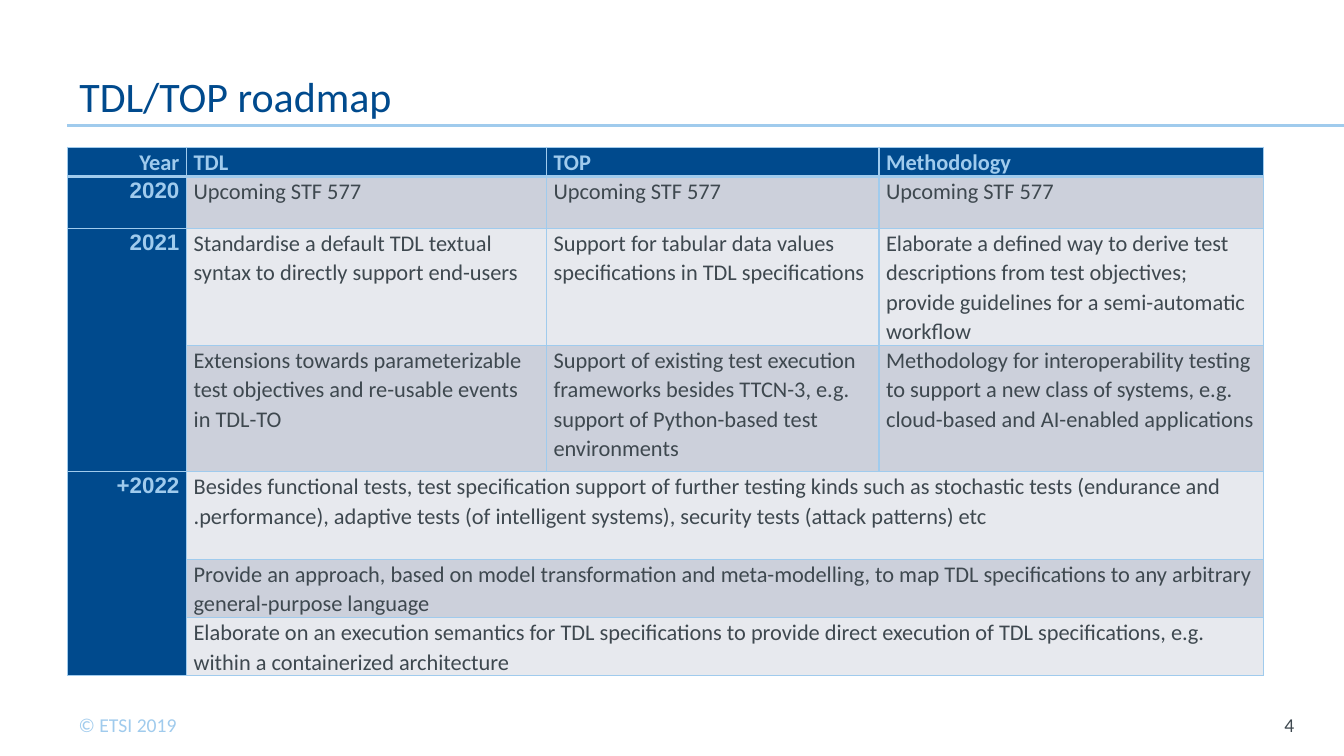
from dataclasses import dataclass

from lxml.etree import SubElement
from pptx import Presentation
from pptx.dml.color import RGBColor
from pptx.enum.shapes import MSO_CONNECTOR
from pptx.enum.text import MSO_ANCHOR, PP_ALIGN
from pptx.oxml.ns import qn
from pptx.util import Cm, Pt

COLORS = {
    "navy": "004A8D",
    "sky": "A0CBED",
    "ink": "3E484F",
    "dark band": "CCD0DB",
    "light band": "E7E9EE",
}
FONT = "Calibri"
COLUMN_WIDTHS = [3.0, 9.07, 8.38, 9.7]
ROW_HEIGHTS = [0.74, 1.3, 2.95, 3.18, 2.21, 1.47, 1.47]


@dataclass
class Entry:
    row: int
    column: int
    text: str
    row_span: int = 1
    column_span: int = 1
    right_to_left: bool = False


ENTRIES = [
    Entry(0, 0, "Year", right_to_left=True),
    Entry(0, 1, "TDL"),
    Entry(0, 2, "TOP"),
    Entry(0, 3, "Methodology"),
    Entry(1, 0, "2020", right_to_left=True),
    *(Entry(1, column, "Upcoming STF 577") for column in (1, 2, 3)),
    Entry(2, 0, "2021", row_span=2, right_to_left=True),
    Entry(2, 1, "Standardise a default TDL textual syntax to directly support end-users"),
    Entry(2, 2, "Support for tabular data values specifications in TDL specifications"),
    Entry(2, 3, "Elaborate a defined way to derive test descriptions from test objectives; "
                "provide guidelines for a semi-automatic workflow"),
    Entry(3, 1, "Extensions towards parameterizable test objectives and re-usable events "
                "in TDL-TO"),
    Entry(3, 2, "Support of existing test execution frameworks besides TTCN-3, e.g. "
                "support of Python-based test environments"),
    Entry(3, 3, "Methodology for interoperability testing to support a new class of "
                "systems, e.g. cloud-based and AI-enabled applications"),
    Entry(4, 0, "2022+", row_span=3, right_to_left=True),
    Entry(4, 1, "Besides functional tests, test specification support of further testing "
                "kinds such as stochastic tests (endurance and performance), adaptive tests "
                "(of intelligent systems), security tests (attack patterns) etc.",
          column_span=3, right_to_left=True),
    Entry(5, 1, "Provide an approach, based on model transformation and meta-modelling, to "
                "map TDL specifications to any arbitrary general-purpose language",
          column_span=3),
    Entry(6, 1, "Elaborate on an execution semantics for TDL specifications to provide "
                "direct execution of TDL specifications, e.g. within a containerized "
                "architecture", column_span=3),
]


def write(frame, text: str, *, size: float, color: str, bold: bool = False,
          align=PP_ALIGN.LEFT, line_spacing=None, right_to_left: bool = False,
          digit_font: str = FONT) -> None:
    paragraph = frame.paragraphs[0]
    paragraph.alignment = align
    paragraph.line_spacing = line_spacing
    if right_to_left:
        paragraph._p.get_or_add_pPr().set("rtl", "1")
    run = paragraph.add_run()
    run.text = text
    run.font.name = FONT
    run.font.size = Pt(size)
    run.font.bold = bold
    run.font.color.rgb = RGBColor.from_string(COLORS[color])
    SubElement(run._r.get_or_add_rPr(), qn("a:cs")).set("typeface", digit_font)


def add_label(slide, text: str, left: float, top: float, width: float, height: float, *,
              anchor=MSO_ANCHOR.TOP, side: float = 0.25, wrap: bool = True,
              **text_format) -> None:
    frame = slide.shapes.add_textbox(Cm(left), Cm(top), Cm(width), Cm(height)).text_frame
    frame.word_wrap = wrap
    frame.vertical_anchor = anchor
    frame.margin_left = frame.margin_right = Cm(side)
    write(frame, text, **text_format)


def add_title_rule(slide) -> None:
    rule = slide.shapes.add_connector(
        MSO_CONNECTOR.STRAIGHT, Cm(1.7), Cm(3.17), Cm(33.87), Cm(3.17))
    rule.line.color.rgb = RGBColor.from_string(COLORS["sky"])
    rule.line.width = Pt(2.25)
    SubElement(rule._element.spPr, qn("a:effectLst"))


def style_cell(cell, row: int, column: int) -> None:
    """Set borders, fill and margins; the header row has a thick lower edge."""
    properties = cell._tc.get_or_add_tcPr()
    for side in "LRTB":
        thick = (row, side) in ((0, "B"), (1, "T"))
        border = SubElement(properties, qn(f"a:ln{side}"), w=str(Pt(3 if thick else 1)))
        SubElement(SubElement(border, qn("a:solidFill")), qn("a:srgbClr"),
                   val=COLORS["sky"])
    if row == 0 or column == 0:
        fill = "navy"
    else:
        fill = "dark band" if row % 2 else "light band"
    cell.fill.solid()
    cell.fill.fore_color.rgb = RGBColor.from_string(COLORS[fill])
    cell.margin_left = cell.margin_right = Cm(0.18)
    cell.margin_top = cell.margin_bottom = 0


def add_roadmap(slide) -> None:
    roadmap = slide.shapes.add_table(
        len(ROW_HEIGHTS), len(COLUMN_WIDTHS), Cm(1.7), Cm(3.71),
        Cm(sum(COLUMN_WIDTHS)), Cm(sum(ROW_HEIGHTS))).table
    for column, width in zip(roadmap.columns, COLUMN_WIDTHS):
        column.width = Cm(width)
    for row, height in zip(roadmap.rows, ROW_HEIGHTS):
        row.height = Cm(height)
    for row in range(len(ROW_HEIGHTS)):
        for column in range(len(COLUMN_WIDTHS)):
            style_cell(roadmap.cell(row, column), row, column)
    for entry in ENTRIES:
        cell = roadmap.cell(entry.row, entry.column)
        if entry.row_span > 1 or entry.column_span > 1:
            cell.merge(roadmap.cell(entry.row + entry.row_span - 1,
                                    entry.column + entry.column_span - 1))
        is_year = entry.column == 0
        is_heading = is_year or entry.row == 0
        write(cell.text_frame, entry.text, size=16, line_spacing=1.07,
              color="sky" if is_heading else "ink", bold=is_heading,
              align=PP_ALIGN.RIGHT if is_year else PP_ALIGN.LEFT,
              right_to_left=entry.right_to_left,
              digit_font="Arial" if is_year else FONT)


def main() -> None:
    presentation = Presentation()
    presentation.slide_width, presentation.slide_height = Cm(33.87), Cm(19.05)
    slide = presentation.slides.add_slide(presentation.slide_layouts[6])
    add_title_rule(slide)
    add_label(slide, "© ETSI 2019", 1.73, 17.83, 3.4, 0.86, wrap=False,
              size=14, color="sky")
    add_label(slide, "4", 31.12, 17.75, 1.75, 1.02, anchor=MSO_ANCHOR.MIDDLE,
              size=14, color="ink", align=PP_ALIGN.RIGHT)
    add_label(slide, "TDL/TOP roadmap", 1.7, 0.76, 26.47, 2.41,
              anchor=MSO_ANCHOR.BOTTOM, side=0.3, size=30, color="navy",
              line_spacing=Pt(30))
    add_roadmap(slide)
    presentation.save("out.pptx")


if __name__ == "__main__":
    main()
